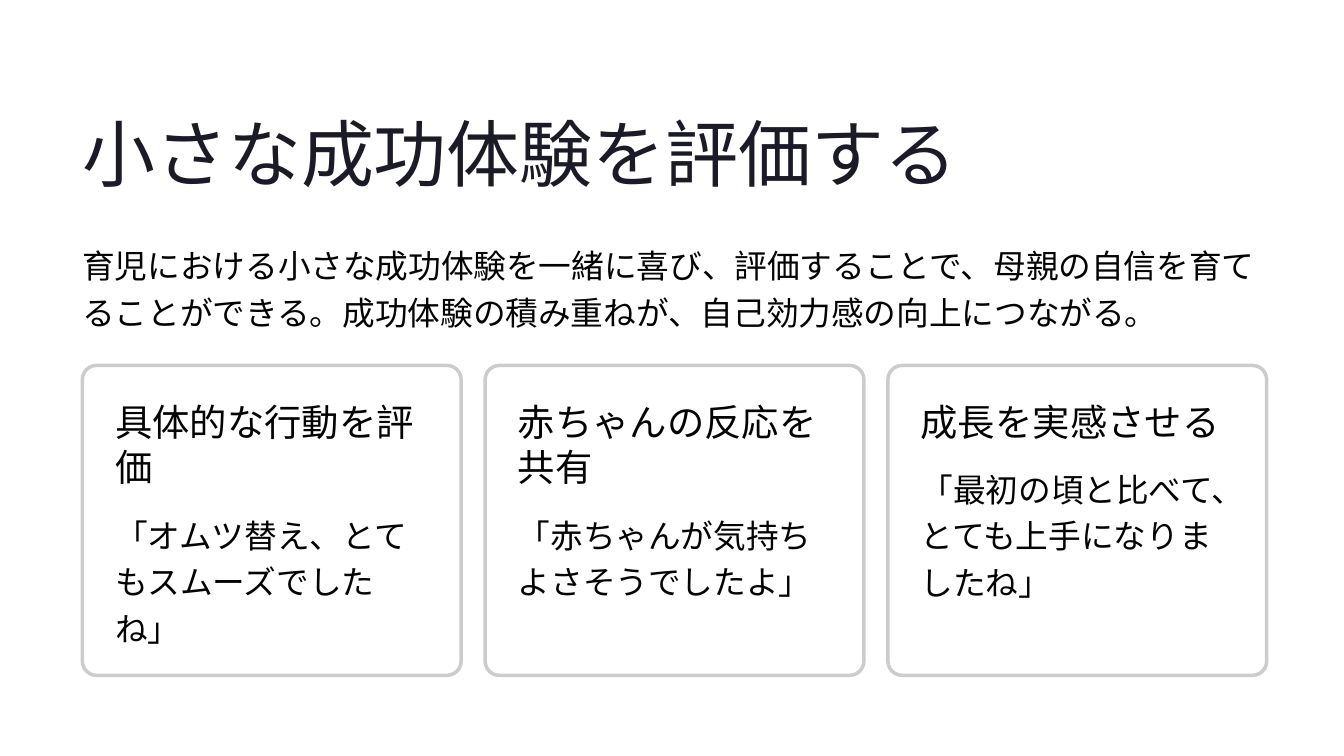
from pptx import Presentation
from pptx.dml.color import RGBColor
from pptx.enum.shapes import MSO_SHAPE
from pptx.enum.text import MSO_ANCHOR, MSO_AUTO_SIZE, PP_ALIGN
from pptx.oxml.ns import qn
from pptx.util import Inches, Pt
from lxml.etree import SubElement

TITLE = "小さな成功体験を評価する"
INTRO = "育児における小さな成功体験を一緒に喜び、評価することで、母親の自信を育てることができる。成功体験の積み重ねが、自己効力感の向上につながる。"
CARDS = [
    ("具体的な行動を評価", 1.25, "「オムツ替え、とてもスムーズでしたね」", 6.05, 1.28),
    ("赤ちゃんの反応を共有", 1.25, "「赤ちゃんが気持ちよさそうでしたよ」", 6.05, 1.28),
    ("成長を実感させる", 0.63, "「最初の頃と比べて、とても上手になりましたね」", 5.5, 1.93),
]

NAVY = RGBColor(0x1B, 0x1B, 0x27)
INK = RGBColor(0x03, 0x03, 0x03)
WHITE = RGBColor(0xFF, 0xFF, 0xFF)
GREY = RGBColor(0xCC, 0xCC, 0xCC)

TITLE_STYLE = ("Inter", 62.5, 78.5, NAVY)
HEAD_STYLE = ("Inter", 32, 39, INK)
BODY_STYLE = ("Karla", 28, 40, INK)

LEFT, TOP = 0.98, 4.35
CARD_W, CARD_H = 4.51, 3.69
STEP, PAD, TEXT_W = 4.795, 0.39, 3.72


def set_text(shape, text, style, wrap=True):
    name, size, lead, color = style
    frame = shape.text_frame
    frame.text = text
    frame.auto_size = MSO_AUTO_SIZE.NONE
    frame.word_wrap = wrap
    frame.vertical_anchor = MSO_ANCHOR.TOP
    frame.margin_left = frame.margin_right = 0
    frame.margin_top = frame.margin_bottom = 0
    para = frame.paragraphs[0]
    para.alignment = PP_ALIGN.LEFT
    para.line_spacing = Pt(lead)
    para.font.name = name
    para.font.size = Pt(size)
    para.font.color.rgb = color


def add_text(slide, box, text, style):
    shape = slide.shapes.add_textbox(*map(Inches, box))
    set_text(shape, text, style)


def add_card(slide, left):
    box = map(Inches, (left, TOP, CARD_W, CARD_H))
    card = slide.shapes.add_shape(MSO_SHAPE.ROUNDED_RECTANGLE, *box)
    card.adjustments[0] = 0.046
    card.shadow.inherit = False
    card.fill.solid()
    card.fill.fore_color.rgb = WHITE
    tint = card.fill._xPr.find(qn("a:solidFill"))[0]
    SubElement(tint, qn("a:alpha"), val="95000")
    card.line.color.rgb = GREY
    card.line.width = Pt(3)


def main():
    deck = Presentation()
    deck.slide_width, deck.slide_height = Inches(16), Inches(9)
    slide = deck.slides.add_slide(deck.slide_layouts[5])
    title = slide.shapes.title
    title.left, title.top = Inches(LEFT), Inches(1.24)
    title.width, title.height = Inches(10.49), Inches(1.09)
    set_text(title, TITLE, TITLE_STYLE, wrap=False)
    add_text(slide, (LEFT, 2.84, 14.25, 1.28), INTRO, BODY_STYLE)
    for i, (head, head_h, body, body_top, body_h) in enumerate(CARDS):
        left = LEFT + i * STEP
        add_card(slide, left)
        x = left + PAD
        add_text(slide, (x, TOP + PAD, TEXT_W, head_h), head, HEAD_STYLE)
        add_text(slide, (x, body_top, TEXT_W, body_h), body, BODY_STYLE)
    deck.save("out.pptx")


if __name__ == "__main__":
    main()
